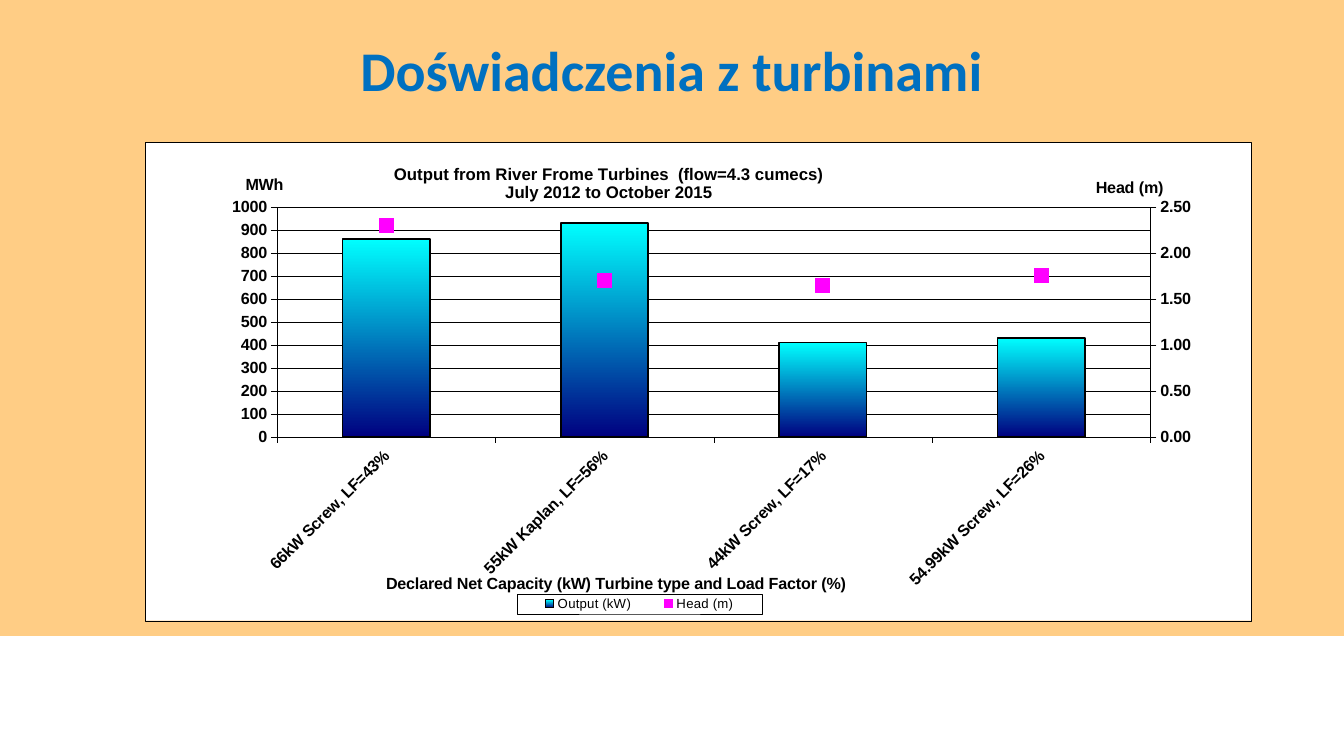
from copy import deepcopy

from pptx import Presentation
from pptx import util as u
from pptx.chart import axis as chart_axis
from pptx.chart import data as chart_data
from pptx.dml.color import RGBColor
from pptx.enum import chart as ce, shapes, text
from pptx.oxml import parse_xml
from pptx.oxml.ns import nsdecls, qn

SLIDE_TITLE = "Doświadczenia z turbinami"
CHART_TITLE = ("Output from River Frome Turbines  (flow=4.3 cumecs)\n"
               "July 2012 to October 2015")
TURBINES = ["66kW Screw, LF=43%", "55kW Kaplan, LF=56%",
            "44kW Screw, LF=17%", "54.99kW Screw, LF=26%"]
SERIES = {"Output (kW)": [860, 930, 410, 430], "Head (m)": [2.3, 1.7, 1.64, 1.75]}
CATEGORY_TITLE = "Declared Net Capacity (kW) Turbine type and Load Factor (%)"

BLACK = RGBColor(0, 0, 0)
WHITE = RGBColor(255, 255, 255)
ORANGE = RGBColor(0xFF, 0xAA, 0x2D)
BLUE = RGBColor(0, 0x70, 0xC0)
CYAN = RGBColor(0, 255, 255)
NAVY = RGBColor(0, 0, 0x80)
MAGENTA = RGBColor(255, 0, 255)

# Left, top and, where set, width and height, as fractions of the chart
PLOT_AREA = (0.119, 0.135, 0.79, 0.481)
LEGEND_AREA = (0.336, 0.944, 0.222, 0.042)
TITLE_AT = (0.222, 0.039)
CATEGORY_TITLE_AT = (0.215, 0.894)
OUTPUT_TITLE_AT = (0.088, 0.06)
HEAD_TITLE_AT = (0.857, 0.067)


def set_font(font, size, bold=True, color=BLACK, name="Arial"):
    values = {"size": u.Pt(size), "bold": bold, "name": name}
    for attribute, value in values.items():
        setattr(font, attribute, value)
    font.color.rgb = color


def set_line(line, width=0.25):
    line.color.rgb = BLACK
    line.width = u.Pt(width)


def place(element, area, inner=False):
    """Give a chart part a manual layout."""
    for layout in element.findall(qn("c:layout")):
        element.remove(layout)
    target = '<c:layoutTarget val="inner"/>' if inner else ""
    modes = '<c:xMode val="edge"/><c:yMode val="edge"/>'
    sizes = "".join(f'<c:{key} val="{value}"/>' for key, value in zip("xywh", area))
    layout = parse_xml(f'<c:layout {nsdecls("c")}><c:manualLayout>{target}{modes}{sizes}'
                       '</c:manualLayout></c:layout>')
    overlay = element.find(qn("c:overlay"))
    if overlay is None:
        element.insert(0, layout)
    else:
        overlay.addprevious(layout)


def set_title(title, wording, area, size):
    frame = title.text_frame
    frame.text = wording
    for paragraph in frame.paragraphs:
        set_font(paragraph.font, size)
        for run in paragraph.runs:
            set_font(run.font, size)
    frame._txBody.bodyPr.set("rot", "0")
    place(title._element, area)


def format_axis(axis, wording, area):
    axis.has_title = True
    set_title(axis.axis_title, wording, area, 11.5)
    axis.major_tick_mark = ce.XL_TICK_MARK.OUTSIDE
    axis.minor_tick_mark = ce.XL_TICK_MARK.NONE
    set_font(axis.tick_labels.font, 11.5)
    set_line(axis.format.line)


def scale_axis(axis, top, step, number_format):
    values = {"minimum_scale": 0, "maximum_scale": top, "major_unit": step}
    for attribute, value in values.items():
        setattr(axis, attribute, value)
    axis.tick_labels.number_format = number_format
    axis.tick_labels.number_format_is_linked = False


def add_head_axis(chart, output_axis):
    """Move the second series to a line plot on a right-hand axis."""
    bar_plot = chart.plots[0]._element
    head = bar_plot.findall(qn("c:ser"))[1]
    for tag in head.findall(qn("c:invertIfNegative")):
        head.remove(tag)
    line_plot = parse_xml(
        f'<c:lineChart {nsdecls("c")}><c:grouping val="standard"/><c:varyColors val="0"/>'
        '<c:marker val="1"/><c:axId val="5001"/><c:axId val="5002"/></c:lineChart>')
    line_plot.insert(2, head)
    bar_plot.addnext(line_plot)

    primary = [chart.category_axis._element, output_axis._element]
    category, value = [deepcopy(element) for element in primary]
    for element, own, other in ((category, "5001", "5002"), (value, "5002", "5001")):
        element.find(qn("c:axId")).set("val", own)
        element.find(qn("c:crossAx")).set("val", other)
    value.find(qn("c:axPos")).set("val", "r")
    value.find(qn("c:crosses")).set("val", "max")
    primary[1].addnext(category)
    category.addnext(value)
    chart_axis.CategoryAxis(category).visible = False
    head_axis = chart_axis.ValueAxis(value)
    head_axis.has_major_gridlines = False
    return head_axis


def add_turbine_chart(slide):
    data = chart_data.CategoryChartData()
    data.categories = TURBINES
    for name, values in SERIES.items():
        data.add_series(name, values)
    chart = slide.shapes.add_chart(
        ce.XL_CHART_TYPE.COLUMN_CLUSTERED, u.Inches(1.44), u.Inches(1.41),
        u.Inches(10.97), u.Inches(4.75), data).chart
    set_font(chart.font, 10.2, bold=False)
    chart._chartSpace.find(qn("c:chart")).addnext(parse_xml(
        f'<c:spPr {nsdecls("c", "a")}><a:solidFill><a:srgbClr val="{WHITE}"/></a:solidFill>'
        f'<a:ln w="3175"><a:solidFill><a:srgbClr val="{BLACK}"/></a:solidFill></a:ln></c:spPr>'))

    chart.has_title = True
    set_title(chart.chart_title, CHART_TITLE, TITLE_AT, 12)
    output_axis = chart.value_axis
    head_axis = add_head_axis(chart, output_axis)
    format_axis(chart.category_axis, CATEGORY_TITLE, CATEGORY_TITLE_AT)
    format_axis(output_axis, "MWh", OUTPUT_TITLE_AT)
    format_axis(head_axis, "Head (m)", HEAD_TITLE_AT)
    scale_axis(output_axis, 1000, 100, "0")
    scale_axis(head_axis, 2.5, 0.5, "0.00")
    set_line(output_axis.major_gridlines.format.line)
    label_body = chart.category_axis._element.find(qn("c:txPr")).find(qn("a:bodyPr"))
    label_body.set("rot", "-2700000")
    label_body.set("vert", "horz")

    bars, points = chart.plots
    bars.gap_width = 150
    bars.vary_by_categories = False
    output = bars.series[0]
    output.format.fill.gradient()
    output.format.fill.gradient_angle = 270
    for stop, color in zip(output.format.fill.gradient_stops, (CYAN, NAVY)):
        stop.color.rgb = color
    set_line(output.format.line, 1)

    head = points.series[0]
    head.smooth = False
    head.format.line.fill.background()
    head.marker.style = ce.XL_MARKER_STYLE.SQUARE
    head.marker.size = 10
    head.marker.format.fill.solid()
    head.marker.format.fill.fore_color.rgb = MAGENTA
    head.marker.format.line.color.rgb = MAGENTA

    chart.has_legend = True
    legend = chart.legend
    legend.position = ce.XL_LEGEND_POSITION.BOTTOM
    legend.include_in_layout = False
    set_font(legend.font, 9.4, bold=False)
    place(legend._element, LEGEND_AREA)
    legend._element.find(qn("c:overlay")).addnext(parse_xml(
        f'<c:spPr {nsdecls("c", "a")}><a:ln w="3175"><a:solidFill>'
        f'<a:srgbClr val="{BLACK}"/></a:solidFill></a:ln></c:spPr>'))
    place(bars._element.getparent(), PLOT_AREA, inner=True)


def add_band(slide, width):
    band = slide.shapes.add_shape(shapes.MSO_SHAPE.RECTANGLE, 0, 0, width, u.Inches(6.31))
    band.shadow.inherit = False
    band.fill.solid()
    band.fill.fore_color.rgb = ORANGE
    band.line.fill.background()
    color = band._element.spPr.find(qn("a:solidFill"))[0]
    color.append(parse_xml(f'<a:alpha {nsdecls("a")} val="58000"/>'))
    slide.shapes._spTree.insert(2, band._element)


def main():
    presentation = Presentation()
    presentation.slide_width = u.Inches(13.33)
    presentation.slide_height = u.Inches(7.5)
    slide = presentation.slides.add_slide(presentation.slide_layouts[5])
    add_band(slide, presentation.slide_width)
    title = slide.shapes.title
    title.left, title.top, title.width, title.height = map(u.Inches, (0.91, 0, 11.5, 1.45))
    title.text_frame.text = SLIDE_TITLE
    title.text_frame.vertical_anchor = text.MSO_ANCHOR.MIDDLE
    paragraph = title.text_frame.paragraphs[0]
    paragraph.alignment = text.PP_ALIGN.CENTER
    paragraph.line_spacing = 0.9
    set_font(paragraph.runs[0].font, 40, color=BLUE, name="Calibri")
    add_turbine_chart(slide)
    presentation.save("out.pptx")


if __name__ == "__main__":
    main()
